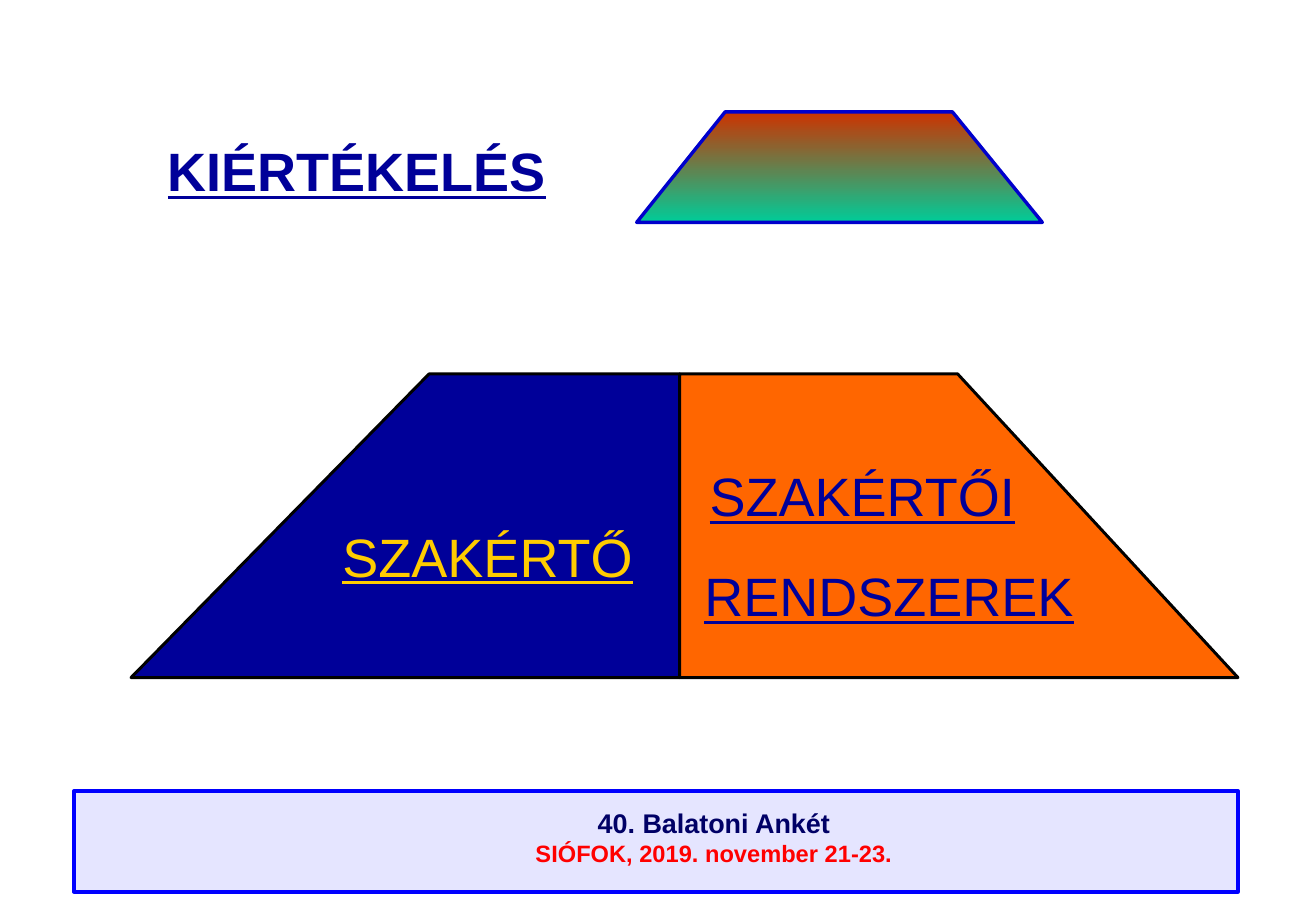
from pptx import Presentation
from pptx.dml.color import RGBColor
from pptx.enum.text import MSO_ANCHOR, MSO_AUTO_SIZE, PP_ALIGN
from pptx.enum.shapes import MSO_SHAPE
from pptx.oxml.ns import qn
from pptx.util import Cm, Pt
from lxml import etree

RECTANGLE = MSO_SHAPE.RECTANGLE
CENTER = PP_ALIGN.CENTER
TOP, MIDDLE = MSO_ANCHOR.TOP, MSO_ANCHOR.MIDDLE
GROW = MSO_AUTO_SIZE.SHAPE_TO_FIT_TEXT
color = RGBColor.from_string

presentation = Presentation()
presentation.slide_width, presentation.slide_height = Cm(27.51), Cm(19.05)
slide = presentation.slides.add_slide(presentation.slide_layouts[6])

footer = slide.shapes.add_shape(RECTANGLE, Cm(1.55), Cm(16.54), Cm(24.33), Cm(2.11))
footer.shadow.inherit = False
footer.fill.solid()
footer.fill.fore_color.rgb = color("CCCCFF")
footer_color = footer.fill._xPr.find(qn("a:solidFill"))[0]
etree.SubElement(footer_color, qn("a:alpha")).set("val", "50000")
footer.line.color.rgb = color("0000FF")
footer.line.width = Pt(2.25)

base_top, base_bottom, middle = 7.82, 14.17, 14.21
trapezoids = [
    ([(13.31, 4.65), (15.16, 2.34), (19.91, 2.34), (21.79, 4.65)],
     ["CC3300", "00CC99"], "0000CC", 2),
    ([(8.97, base_top), (middle, base_top), (middle, base_bottom), (2.74, base_bottom)],
     ["000099"], "000000", 1.75),
    ([(20.02, base_top), (middle, base_top), (middle, base_bottom), (25.88, base_bottom)],
     ["FF6600"], "000000", 1.75),
]
for corners, fills, line_color, line_width in trapezoids:
    points = [(Cm(x), Cm(y)) for x, y in corners]
    builder = slide.shapes.build_freeform(*points[0])
    builder.add_line_segments(points[1:], close=True)
    shape = builder.convert_to_shape()
    shape.shadow.inherit = False
    if len(fills) > 1:
        shape.fill.gradient()
        shape.fill.gradient_angle = 270
        for stop, stop_color in zip(shape.fill.gradient_stops, fills):
            stop.color.rgb = color(stop_color)
    else:
        shape.fill.solid()
        shape.fill.fore_color.rgb = color(fills[0])
    shape.line.color.rgb = color(line_color)
    shape.line.width = Pt(line_width)

labels = [
    (4.55, 16.74, 20.75, 1.55, TOP, True, [
        ("40. Balatoni Ankét", 16, "000066", True, False),
        ("SIÓFOK, 2019. november 21-23.", 14, "FF0000", True, False)]),
    (2.79, 2.74, 9.35, 1.63, MIDDLE, True, [("KIÉRTÉKELÉS", 32, "000099", True, True)]),
    (6.88, 10.8, 6.63, 1.63, MIDDLE, False, [("SZAKÉRTŐ", 32, "FFCC00", False, True)]),
    (14.55, 9.53, 6.96, 1.63, MIDDLE, False, [("SZAKÉRTŐI", 32, "000099", False, True)]),
    (14.43, 11.63, 8.31, 1.63, MIDDLE, False, [("RENDSZEREK", 32, "000099", False, True)]),
]
for left, top, width, height, anchor, wrap, lines in labels:
    box = slide.shapes.add_textbox(Cm(left), Cm(top), Cm(width), Cm(height))
    text_frame = box.text_frame
    text_frame.word_wrap = wrap
    text_frame.auto_size = GROW
    text_frame.vertical_anchor = anchor
    text_frame.text = "\n".join(line[0] for line in lines)
    for paragraph, (_, size, text_color, bold, underline) in zip(text_frame.paragraphs, lines):
        paragraph.alignment = CENTER
        font = paragraph.runs[0].font
        font.name = "Arial"
        font.size = Pt(size)
        font.bold = bold
        font.underline = underline
        font.color.rgb = color(text_color)

presentation.save("out.pptx")
